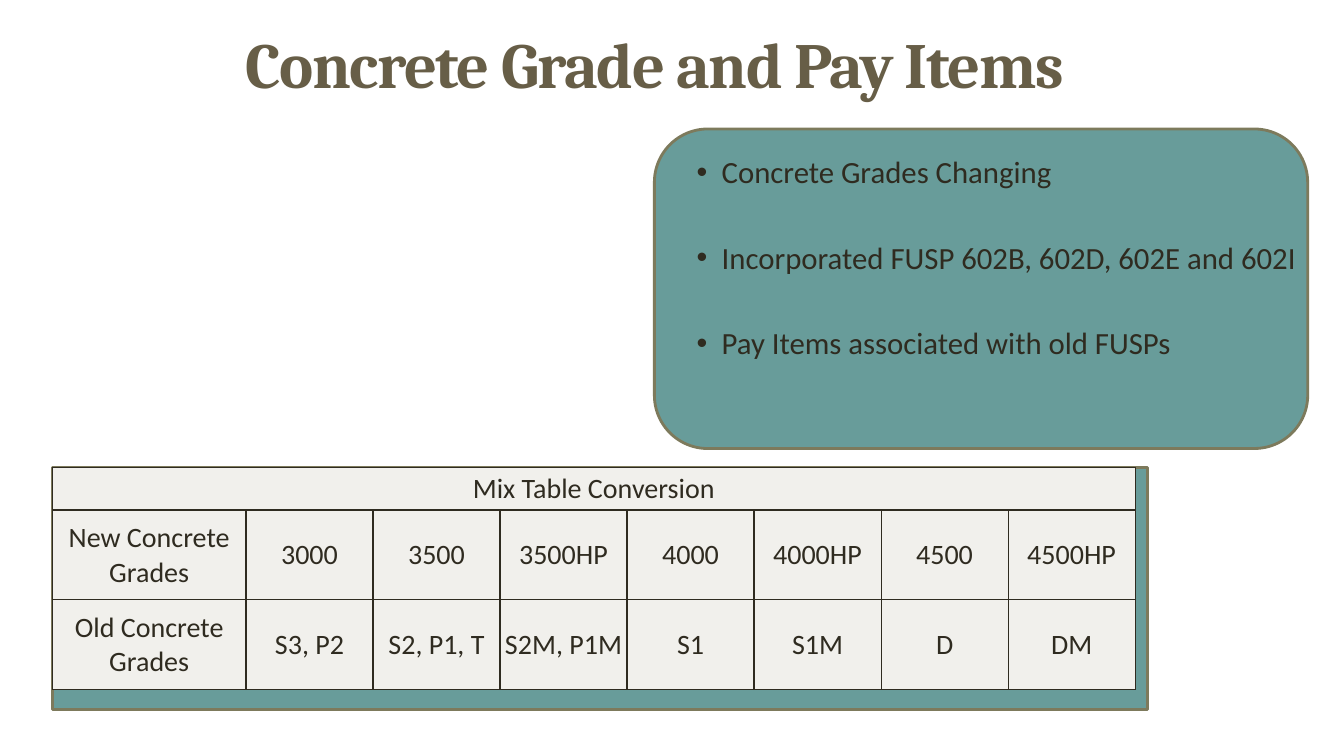
"""Build the slide on concrete grades and pay items."""
from lxml import etree
from pptx import Presentation
from pptx.dml.color import RGBColor
from pptx.enum.shapes import MSO_SHAPE as Preset
from pptx.enum.text import MSO_ANCHOR as Anchor, PP_ALIGN as Align
from pptx.oxml.ns import qn
from pptx.util import Inches, Pt

TITLE = "Concrete Grade and Pay Items"
BULLETS = [
    "Concrete Grades Changing",
    "Incorporated FUSP 602B, 602D, 602E and 602I",
    "Pay Items associated with old FUSPs",
]
MIX_TABLE = [
    ["Mix Table Conversion"],
    ["New Concrete Grades", "3000", "3500", "3500HP", "4000", "4000HP", "4500", "4500HP"],
    ["Old Concrete Grades", "S3, P2", "S2, P1, T", "S2M, P1M", "S1", "S1M", "D", "DM"],
]
PANELS = [
    (Preset.ROUNDED_RECTANGLE, (6.49, 1.28, 6.48, 3.17)),
    (Preset.RECTANGLE, (0.52, 4.64, 10.86, 2.4)),
]
TITLE_BOX = (2.03, 0, 8.93, 1.25)
BULLET_BOX = (6.68, 1.47, 6.48, 2.73)
TABLE_BOX = (0.52, 4.64, 10.73, 2.2)
COLUMN_WIDTHS = [1.92] + [1.26] * 7
ROW_HEIGHTS = [0.42, 0.89, 0.89]

THEME = {
    "panel": "689C9A", "panel_line": "7D7A5C", "title": "675E47",
    "text": "2F2B20", "cell": "F1F0EC",
    "title_font": "Cambria", "body_font": "Calibri",
    "title_size": 46, "bullet_size": 22, "table_size": 20,
    "bullet_gap": 34.6, "panel_line_width": 2, "border_width": 1,
}


def color(name):
    return RGBColor.from_string(THEME[name])


def place(box):
    return [Inches(length) for length in box]


def add_text(paragraph, text, size, tint="text", font="body_font", bold=False):
    run = paragraph.add_run()
    run.text = text
    run.font.name = THEME[font]
    run.font.size = Pt(THEME[size])
    run.font.bold = bold
    run.font.color.rgb = color(tint)
    return run


def add_panel(slide, preset, box):
    shape = slide.shapes.add_shape(preset, *place(box))
    shape.shadow.inherit = False
    shape.fill.solid()
    shape.fill.fore_color.rgb = color("panel")
    shape.line.color.rgb = color("panel_line")
    shape.line.width = Pt(THEME["panel_line_width"])


def add_frame(slide, box, anchor):
    frame = slide.shapes.add_textbox(*place(box)).text_frame
    frame.word_wrap = True
    frame.vertical_anchor = anchor
    return frame


def add_title(slide):
    paragraph = add_frame(slide, TITLE_BOX, Anchor.MIDDLE).paragraphs[0]
    paragraph.alignment = Align.CENTER
    run = add_text(paragraph, TITLE, "title_size", "title", "title_font", True)
    run.font._element.set("spc", "-100")


def add_bullets(slide):
    frame = add_frame(slide, BULLET_BOX, Anchor.TOP)
    for index, text in enumerate(BULLETS):
        paragraph = frame.add_paragraph() if index else frame.paragraphs[0]
        properties = paragraph._p.get_or_add_pPr()
        properties.set("marL", str(Inches(0.38)))
        properties.set("indent", str(Inches(-0.25)))
        if index:
            paragraph.space_before = Pt(THEME["bullet_gap"])
        etree.SubElement(properties, qn("a:buFont"), typeface="Arial")
        etree.SubElement(properties, qn("a:buChar"), char="•")
        add_text(paragraph, text, "bullet_size")


def style_cell(cell):
    cell.margin_left = cell.margin_right = cell.margin_top = Inches(0.01)
    cell.margin_bottom = 0
    cell.vertical_anchor = Anchor.MIDDLE
    properties = cell._tc.get_or_add_tcPr()
    for side in ("lnL", "lnR", "lnT", "lnB"):
        width = str(Pt(THEME["border_width"]))
        border = etree.SubElement(properties, qn(f"a:{side}"), w=width)
        fill = etree.SubElement(border, qn("a:solidFill"))
        etree.SubElement(fill, qn("a:srgbClr"), val=THEME["text"])
    cell.fill.solid()
    cell.fill.fore_color.rgb = color("cell")


def add_mix_table(slide):
    rows, columns = len(ROW_HEIGHTS), len(COLUMN_WIDTHS)
    table = slide.shapes.add_table(rows, columns, *place(TABLE_BOX)).table
    table.first_row = table.horz_banding = False
    for column, width in zip(table.columns, COLUMN_WIDTHS):
        column.width = Inches(width)
    for row, height in zip(table.rows, ROW_HEIGHTS):
        row.height = Inches(height)
    for cell in table.iter_cells():
        style_cell(cell)
    table.cell(0, 0).merge(table.cell(0, columns - 1))
    for row_index, texts in enumerate(MIX_TABLE):
        for column_index, text in enumerate(texts):
            paragraph = table.cell(row_index, column_index).text_frame.paragraphs[0]
            paragraph.alignment = Align.CENTER
            add_text(paragraph, text, "table_size")


def main():
    presentation = Presentation()
    presentation.slide_width = Inches(13.33)
    presentation.slide_height = Inches(7.5)
    slide = presentation.slides.add_slide(presentation.slide_layouts[6])
    for preset, box in PANELS:
        add_panel(slide, preset, box)
    add_title(slide)
    add_bullets(slide)
    add_mix_table(slide)
    presentation.save("out.pptx")


if __name__ == "__main__":
    main()
